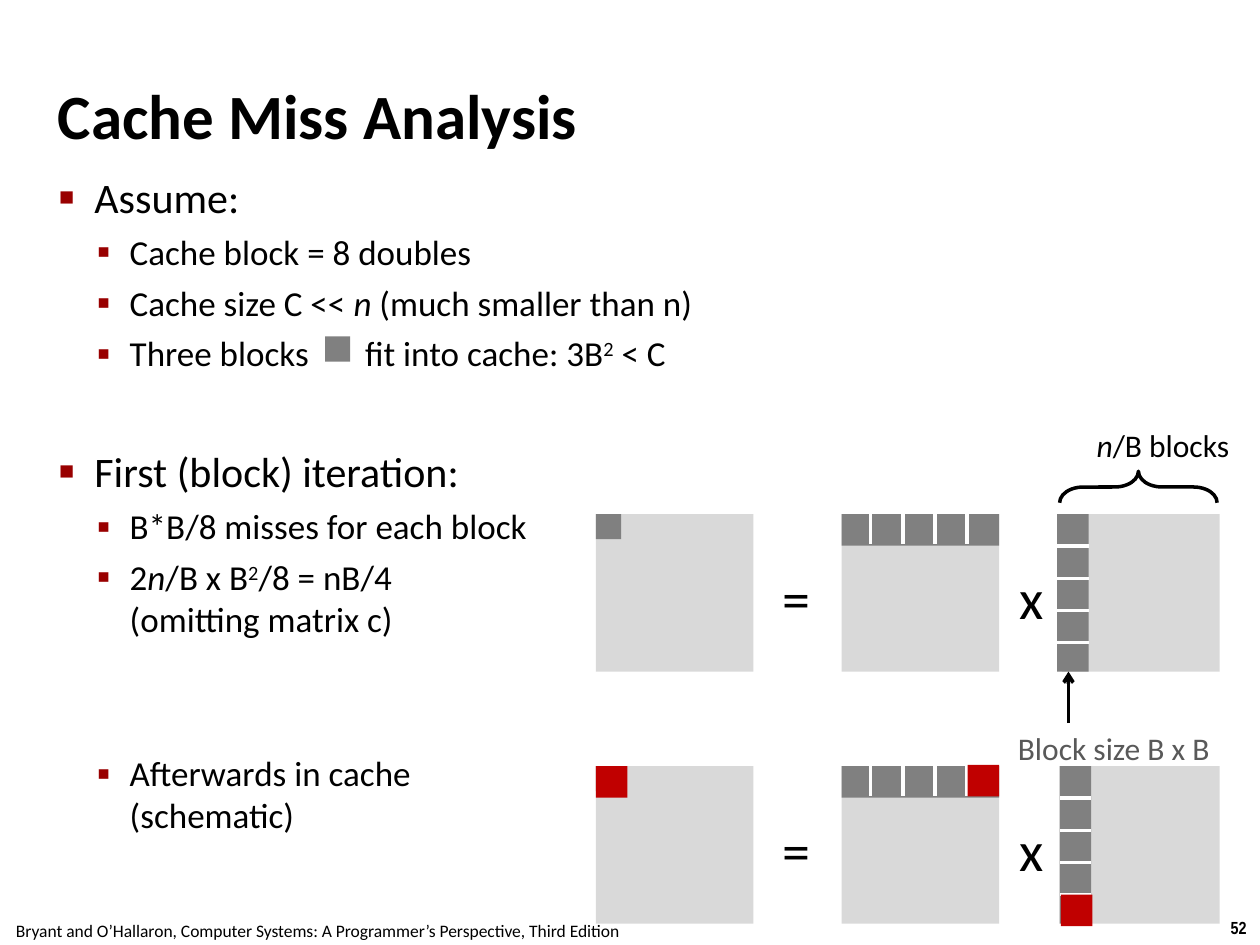
from lxml import etree
from pptx import Presentation
from pptx.dml.color import RGBColor
from pptx.enum.shapes import MSO_CONNECTOR, MSO_SHAPE
from pptx.enum.text import MSO_ANCHOR, MSO_AUTO_SIZE, PP_ALIGN
from pptx.oxml.ns import qn
from pptx.util import Inches, Pt

RECT, BRACE = MSO_SHAPE.RECTANGLE, MSO_SHAPE.LEFT_BRACE
LINE = MSO_CONNECTOR.STRAIGHT
LEFT, CENTER = PP_ALIGN.LEFT, PP_ALIGN.CENTER
MIDDLE = MSO_ANCHOR.MIDDLE
GROW, FIXED = MSO_AUTO_SIZE.SHAPE_TO_FIT_TEXT, MSO_AUTO_SIZE.NONE

BLACK = RGBColor(0, 0, 0)
WHITE = RGBColor(255, 255, 255)
PALE = RGBColor(0xD9, 0xD9, 0xD9)
GRAY = RGBColor(0x80, 0x80, 0x80)
DARK = RGBColor(0x59, 0x59, 0x59)
RED = RGBColor(0xC0, 0, 0)
MAROON = "990000"

SIDE, BLOCK, STEP = 1.25, 0.25, 0.255  # matrix side, block side, grid step

# Bullet levels: size, left indent, hanging, glyph, glyph size in %
LEVELS = [(24, 0.28, 0.28, "■", 60), (20, 0.56, 0.26, "▪", 110)]

# Body lines: level, space before, runs of (text, style)
BODY = [
    (0, 6, [("Assume:", "")]),
    (1, 5, [("Cache block = 8 doubles", "")]),
    (1, 5, [("Cache size C << ", ""), ("n", "italic"),
            (" (much smaller than n)", "")]),
    (1, 5, [("Three blocks", ""), (" ", "wide"),
            ("fit into cache: 3B", ""), ("2", "super"), (" < C", "")]),
    (0, 41, [("First (block) iteration:", "")]),
    (1, 5, [("B*B/8 misses for each block", "")]),
    (1, 5, [("2", ""), ("n", "italic"), ("/B x B", ""), ("2", "super"),
            ("/8 = nB/4", ""), ("\n", ""), ("(omitting matrix c)", "")]),
    (1, 64, [("Afterwards in cache", ""), ("\n", ""), ("(schematic)", "")]),
]


class Deck:
    """Holds the style and the current slide."""

    font = "Calibri"

    def __init__(self, slide):
        self.slide = slide
        self.shapes = slide.shapes

    def style(self, para, size, color=BLACK, bold=False, font=None):
        para.font.name = font or self.font
        para.font.size = Pt(size)
        para.font.bold = bold
        para.font.color.rgb = color

    def inset(self, frame, pad):
        frame.margin_left = frame.margin_right = Inches(pad)
        frame.margin_top = frame.margin_bottom = Inches(pad)

    def fill_runs(self, para, runs):
        for text, kind in runs:
            if text == "\n":
                para.add_line_break()
                continue
            run = para.add_run()
            run.text = text
            if kind == "italic":
                run.font.italic = True
            elif kind == "super":
                run.font._element.set("baseline", "30000")
            elif kind == "wide":  # room for the inline block
                run.font._element.set("spc", "2750")

    def title(self, text, x, y, w, h):
        box = self.shapes.title
        box.left, box.top, box.width, box.height = map(Inches, (x, y, w, h))
        frame = box.text_frame
        frame.text = text
        frame.auto_size = FIXED
        frame.vertical_anchor = MIDDLE
        self.inset(frame, 0.04)
        para = frame.paragraphs[0]
        para.alignment = LEFT
        self.style(para, 36, bold=True)

    def label(self, runs, x, y, w, h, size, **look):
        box = self.shapes.add_textbox(*map(Inches, (x, y, w, h)))
        frame = box.text_frame
        frame.word_wrap = False
        frame.auto_size = GROW
        para = frame.paragraphs[0]
        para.alignment = CENTER
        self.style(para, size, **look)
        self.fill_runs(para, runs)

    def bullet(self, para, level):
        size, left, hang, glyph, scale = LEVELS[level]
        props = para._p.get_or_add_pPr()
        props.set("marL", str(Inches(left)))
        props.set("indent", str(-Inches(hang)))
        tint = etree.SubElement(props, qn("a:buClr"))
        etree.SubElement(tint, qn("a:srgbClr"), val=MAROON)
        etree.SubElement(props, qn("a:buSzPct"), val=str(scale * 1000))
        etree.SubElement(props, qn("a:buFont"), typeface="Arial")
        etree.SubElement(props, qn("a:buChar"), char=glyph)
        self.style(para, size)

    def body(self, lines, x, y, w, h):
        box = self.shapes.add_textbox(*map(Inches, (x, y, w, h)))
        frame = box.text_frame
        frame.word_wrap = True
        self.inset(frame, 0.04)
        for i, (level, gap, runs) in enumerate(lines):
            para = frame.add_paragraph() if i else frame.paragraphs[0]
            para.level = level
            para.space_before = Pt(gap)
            self.bullet(para, level)
            self.fill_runs(para, runs)

    def rect(self, x, y, w, h, color):
        shape = self.shapes.add_shape(RECT, *map(Inches, (x, y, w, h)))
        shape.shadow.inherit = False
        shape.fill.solid()
        shape.fill.fore_color.rgb = color
        shape.line.fill.background()

    def brace(self, x, y, w, h):
        shape = self.shapes.add_shape(BRACE, *map(Inches, (x, y, w, h)))
        shape.rotation = 90
        shape.adjustments[0] = 0.75
        shape.shadow.inherit = False
        shape.fill.background()
        shape.line.color.rgb = BLACK
        shape.line.width = Pt(2)

    def line(self, x1, y1, x2, y2, color, arrow=False):
        link = self.shapes.add_connector(LINE, *map(Inches, (x1, y1, x2, y2)))
        link.line.color.rgb = color
        link.line.width = Pt(2)
        props = link._element.spPr
        if arrow:
            etree.SubElement(props.find(qn("a:ln")), qn("a:tailEnd"), type="arrow")
        etree.SubElement(props, qn("a:effectLst"))

    def product(self, y, col):
        """One row: matrix = matrix x matrix, with its blocks."""
        for x in (4.73, 6.68, 8.43):
            self.rect(x, y, SIDE, SIDE, PALE)
        self.label([("=", "")], 6.11, y + 0.34, 0.43, 0.64, 32)
        self.label([("x", "")], 7.98, y + 0.34, 0.41, 0.64, 32)
        self.rect(4.73, y, 0.2, 0.2, GRAY)
        self.rect(6.68, y, SIDE, BLOCK, GRAY)
        self.rect(col, y, BLOCK, SIDE, GRAY)
        for k in range(1, 5):
            x, row = 6.655 + k * STEP, y + k * STEP
            self.line(x, y - 0.01, x, y + 0.24, WHITE)
            self.line(col + BLOCK, row, col, row, WHITE)


def main():
    deck = Presentation()
    deck.slide_width, deck.slide_height = Inches(10), Inches(7.5)
    page = Deck(deck.slides.add_slide(deck.slide_layouts[5]))

    # Footer
    page.label([("52", "")], 9.66, 7.23, 0.34, 0.27, 10,
               bold=True, font="Arial Narrow")
    page.label([("Bryant and O’Hallaron, Computer Systems: "
                 "A Programmer’s Perspective, Third Edition", "")],
               -0.02, 7.25, 5.08, 0.27, 10)

    # Title and body
    page.title("Cache Miss Analysis", 0.42, 0.28, 9.17, 1.25)
    page.body(BODY, 0.43, 1.32, 8.64, 3.34)
    page.rect(2.58, 2.67, 0.2, 0.2, GRAY)

    # Matrix products: first iteration, then the cache afterwards
    page.product(4.08, 8.39)
    page.product(6.08, 8.41)
    for x, y in ((4.73, 6.08), (7.68, 6.07), (8.42, 7.1)):
        page.rect(x, y, BLOCK, BLOCK, RED)

    # Block labels
    page.label([("Block size B x B", "")], 7.95, 5.74, 1.78, 0.4, 18, color=DARK)
    page.line(8.48, 5.74, 8.48, 5.33, BLACK, arrow=True)
    page.brace(8.91, 3.24, BLOCK, SIDE)
    page.label([("n", "italic"), ("/B blocks", "")], 8.58, 3.33, 1.3, 0.4, 18)

    deck.save("out.pptx")


if __name__ == "__main__":
    main()
